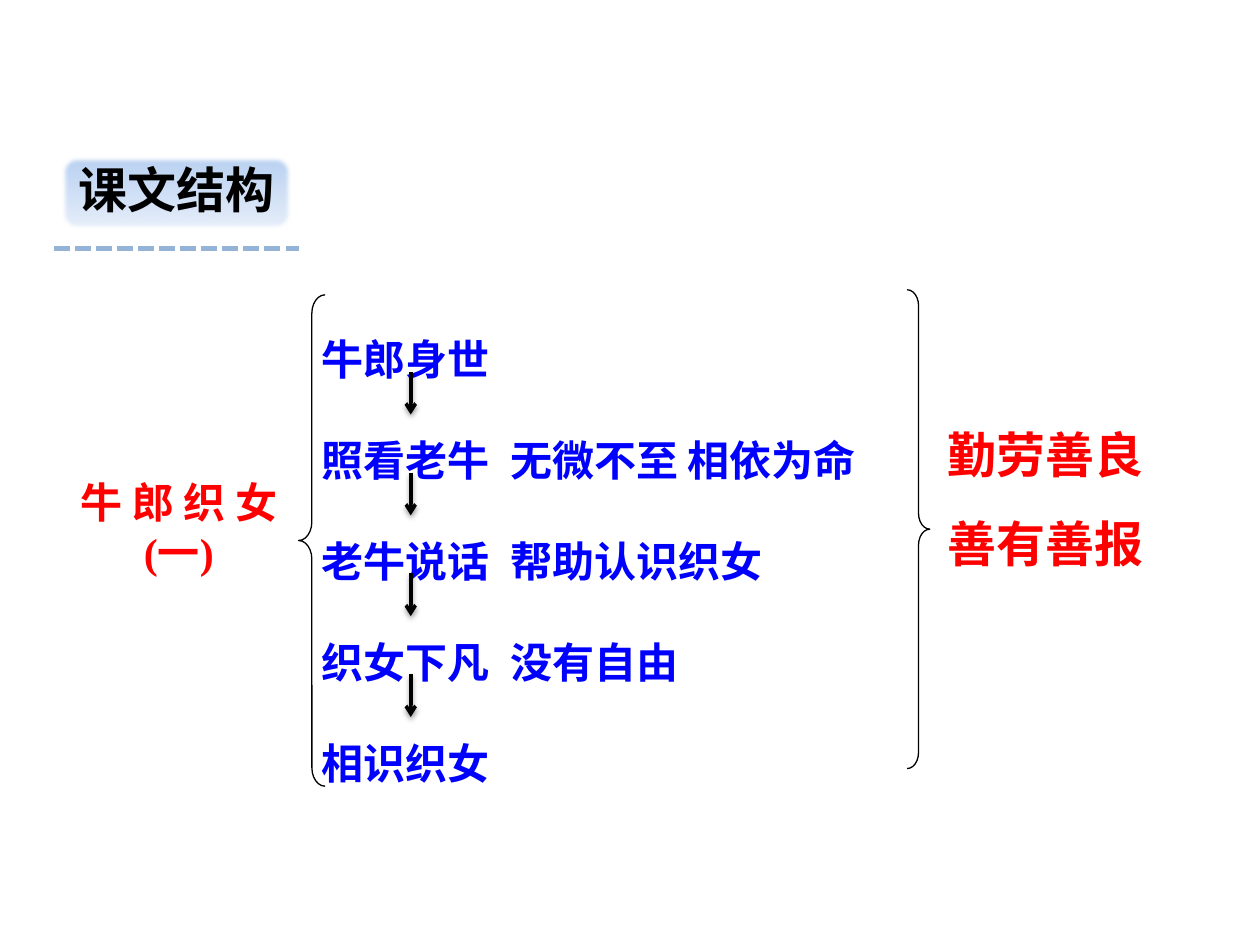
from lxml import etree
from pptx import Presentation
from pptx import util as u
from pptx.dml.color import RGBColor
from pptx.enum import dml, shapes, text
from pptx.oxml import ns

SANS = "Noto Sans CJK SC"
SERIF = "Times New Roman"
BLACK, RED, BLUE = "000000", "FF0000", "0000FF"


def colour(value):
    """Turn a hex string into a colour."""
    return RGBColor.from_string(value)


def add_element(parent, tag, **attributes):
    """Append a drawing element with the given attributes."""
    return etree.SubElement(parent, ns.qn(tag), attributes)


def move(shape, box):
    """Place a shape in a box given in inches."""
    shape.left, shape.top, shape.width, shape.height = map(u.Inches, box)


def write(frame, lines, size, shade, spacing=1.0, name=SANS,
          align=text.PP_ALIGN.LEFT, tab=None):
    """Fill a text frame with bold paragraphs of one style."""
    frame.auto_size = text.MSO_AUTO_SIZE.NONE
    frame.text = "\n".join(lines)
    for para in frame.paragraphs:
        para.alignment = align
        para.line_spacing = spacing
        para.space_before = u.Pt(0)
        properties = para._p.get_or_add_pPr()
        properties.set("marL", "0")
        properties.set("indent", "0")
        add_element(properties, "a:buNone")
        if tab:
            stops = add_element(properties, "a:tabLst")
            add_element(stops, "a:tab", pos=str(u.Inches(tab)), algn="l")
        font = para.font
        font.size, font.bold, font.name = u.Pt(size), True, name
        font.color.rgb = colour(shade)
        add_element(properties.find(ns.qn("a:defRPr")), "a:ea", typeface=SANS)


def add_line(page, start, end, shade, width):
    """Draw a straight line and return it with its empty effect list."""
    line = page.shapes.add_connector(
        shapes.MSO_CONNECTOR.STRAIGHT, *map(u.Inches, start + end))
    line.line.color.rgb = colour(shade)
    line.line.width = u.Pt(width)
    return line, add_element(line._element.spPr, "a:effectLst")


def add_heading(page, box):
    """Draw the heading plate, its title and the dashed rule below."""
    left, top, width, height = box
    plate = page.shapes.add_shape(
        shapes.MSO_SHAPE.ROUNDED_RECTANGLE, *map(u.Inches, box))
    plate.shadow.inherit = False
    plate.fill.gradient()
    plate.fill.gradient_angle = 270
    for stop, shade in zip(plate.fill.gradient_stops, ("B7D0F1", "E8EFFA")):
        stop.color.rgb = colour(shade)
    plate.line.fill.background()
    effects = plate._element.spPr.find(ns.qn("a:effectLst"))
    add_element(effects, "a:softEdge", rad=str(u.Pt(2.5)))

    title = page.shapes.title
    move(title, box)
    write(title.text_frame, ["课文结构"], 28, BLACK, 0.9,
          align=text.PP_ALIGN.CENTER)
    title.text_frame.word_wrap = False
    title.text_frame.vertical_anchor = text.MSO_ANCHOR.MIDDLE
    page.shapes._spTree.append(title._element)

    rule_y = top + height + 0.15
    rule, _ = add_line(page, (left - 0.06, rule_y),
                       (left + width + 0.06, rule_y), "95B3D7", 3)
    rule.line.dash_style = dml.MSO_LINE.SQUARE_DOT


def add_label(page, box, lines, size, **style):
    """Add a red text box."""
    label = page.shapes.add_textbox(*map(u.Inches, box))
    write(label.text_frame, lines, size, RED, **style)
    label.text_frame.word_wrap = True


def add_brace(page, kind, box):
    """Draw a thin black brace."""
    brace = page.shapes.add_shape(kind, *map(u.Inches, box))
    brace.shadow.inherit = False
    brace.fill.background()
    brace.line.color.rgb = colour(BLACK)
    brace.line.width = u.Pt(0.75)
    brace.adjustments[0] = 0.7


def add_plot(page, box):
    """Place the story steps and the arrows that lead down through them."""
    left, top, _, _ = box
    steps = ["牛郎身世", "照看老牛\t无微不至 相依为命", "老牛说话\t帮助认识织女",
             "织女下凡\t没有自由", "相识织女"]
    body = page.placeholders[1]
    move(body, box)
    write(body.text_frame, steps, 24, BLUE, 2.0, tab=1.49)
    body.text_frame.margin_left = u.Inches(0.17)
    body.text_frame.vertical_anchor = text.MSO_ANCHOR.TOP
    page.shapes._spTree.append(body._element)

    arrow_x = left + 0.88
    for index in range(len(steps) - 1):
        arrow_y = top + 0.75 + 0.8 * index
        arrow, effects = add_line(page, (arrow_x, arrow_y),
                                  (arrow_x, arrow_y + 0.34), BLACK, 2)
        add_element(arrow.line._get_or_add_ln(), "a:tailEnd", type="arrow")
        shadow = add_element(effects, "a:outerShdw", blurRad=str(u.Pt(3.1)),
                             dist=str(u.Pt(1.6)), dir="5400000",
                             rotWithShape="0")
        shade = add_element(shadow, "a:srgbClr", val=BLACK)
        add_element(shade, "a:alpha", val="38000")


def main():
    """Build the text structure slide."""
    deck = Presentation()
    deck.slide_width, deck.slide_height = u.Inches(10), u.Inches(7.5)
    page = deck.slides.add_slide(deck.slide_layouts[1])
    add_heading(page, (0.49, 1.24, 1.82, 0.58))
    add_label(page, (0.35, 3.73, 2.14, 0.91), ["牛 郎 织 女(一)"], 24,
              name=SERIF, align=text.PP_ALIGN.CENTER)
    add_label(page, (7.42, 3.09, 1.78, 1.51), ["勤劳善良", "善有善报"], 28,
              spacing=1.5)
    add_brace(page, shapes.MSO_SHAPE.LEFT_BRACE, (2.37, 2.34, 0.21, 3.9))
    add_brace(page, shapes.MSO_SHAPE.RIGHT_BRACE, (7.2, 2.3, 0.18, 3.8))
    add_plot(page, (2.38, 2.2, 5.29, 4.14))
    deck.save("out.pptx")


if __name__ == "__main__":
    main()
